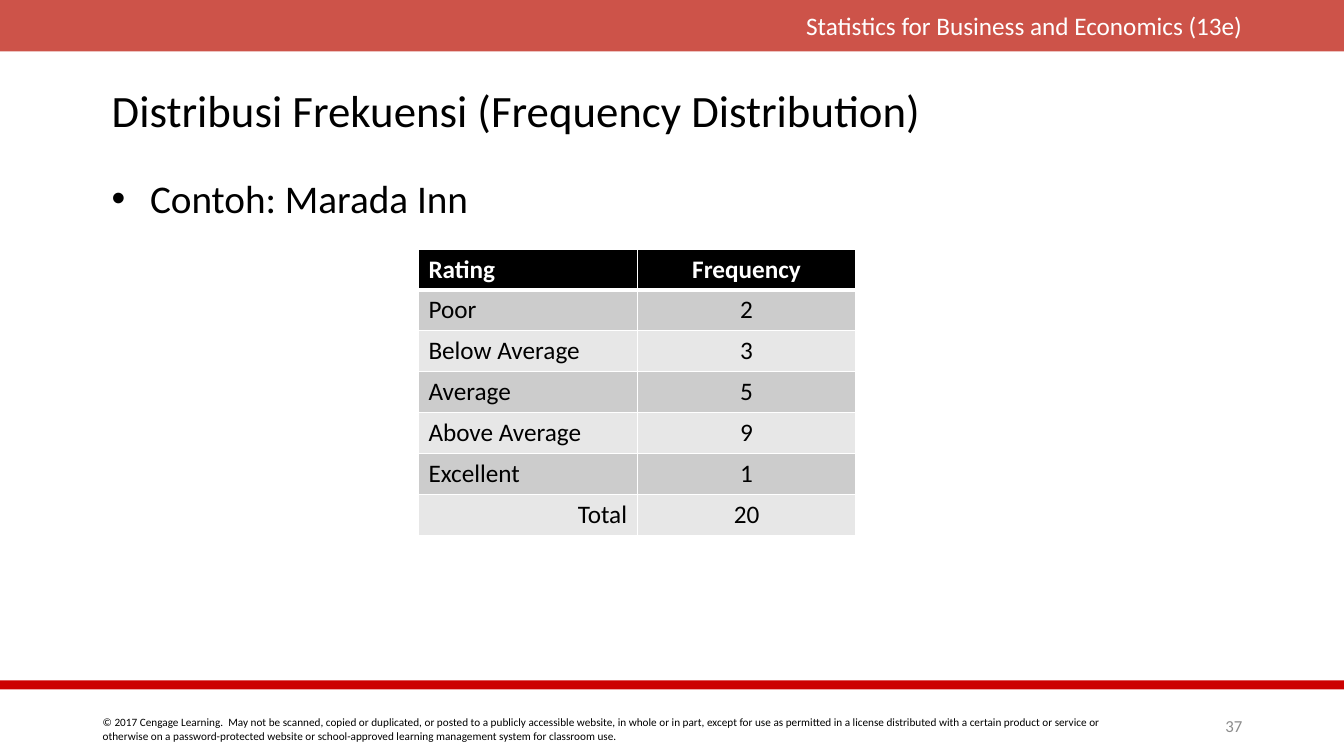
from dataclasses import dataclass

from lxml.etree import SubElement
from pptx import Presentation
from pptx.dml.color import RGBColor
from pptx.enum.shapes import MSO_SHAPE as Shape
from pptx.enum.text import MSO_ANCHOR as Anchor, PP_ALIGN as Align
from pptx.oxml.ns import qn
from pptx.util import Inches, Pt


@dataclass(frozen=True)
class Theme:
    """Colours, type sizes and font of the slide."""
    font: str = "Calibri"
    ink: str = "000000"
    paper: str = "FFFFFF"
    banner: str = "BF2317"
    banner_alpha: int = 78000
    rule: str = "CC0000"
    muted: str = "8C8C8C"
    bands: tuple = ("CCCCCC", "E7E7E7")
    title_size: int = 32
    body_size: int = 28
    table_size: int = 18
    banner_size: int = 18
    number_size: int = 12
    legal_size: int = 8
    grid_width: int = 1
    header_width: int = 3


THEME = Theme()
RATINGS = [
    ("Rating", "Frequency"),
    ("Poor", "2"),
    ("Below Average", "3"),
    ("Average", "5"),
    ("Above Average", "9"),
    ("Excellent", "1"),
    ("Total", "20"),
]
COPYRIGHT = (
    "© 2017 Cengage Learning.  May not be scanned, copied or duplicated, or posted to a "
    "publicly accessible website, in whole or in part, except for use as permitted in a "
    "license distributed with a certain product or service or otherwise on a "
    "password-protected website or school-approved learning management system for "
    "classroom use."
)


def write_run(paragraph, text, size, color=THEME.ink, align=Align.LEFT, bold=False):
    """Add one styled run to a paragraph."""
    paragraph.alignment = align
    run = paragraph.add_run()
    run.text = text
    run.font.name = THEME.font
    run.font.size = Pt(size)
    run.font.bold = bold
    run.font.color.rgb = RGBColor.from_string(color)


def add_text(slide, box, text, size, color=THEME.ink, align=Align.LEFT, anchor=Anchor.TOP):
    """Place a wrapped one-paragraph text box and return its paragraph."""
    frame = slide.shapes.add_textbox(*map(Inches, box)).text_frame
    frame.word_wrap = True
    frame.vertical_anchor = anchor
    paragraph = frame.paragraphs[0]
    write_run(paragraph, text, size, color, align)
    return paragraph


def add_bar(slide, box, color):
    """Place a plain filled bar and return it."""
    bar = slide.shapes.add_shape(Shape.RECTANGLE, *map(Inches, box))
    bar.shadow.inherit = False
    bar.fill.solid()
    bar.fill.fore_color.rgb = RGBColor.from_string(color)
    bar.line.fill.background()
    return bar


def add_banner(slide, box):
    """Draw the translucent top banner with the book title."""
    left, top, width, height = box
    banner = add_bar(slide, box, THEME.banner)
    tint = banner.fill._xPr.find(qn("a:solidFill"))[0]
    SubElement(tint, qn("a:alpha"), val=str(THEME.banner_alpha))
    add_text(slide, (left + width - 5.67, top + 0.05, 4.76, 0.4),
             "Statistics for Business and Economics (13e)",
             THEME.banner_size, THEME.paper, Align.RIGHT)


def add_footer(slide, box):
    """Draw the red rule, the copyright line and the slide number."""
    left, top, width, _ = box
    add_bar(slide, (left, top, width, 0.09), THEME.rule)
    add_text(slide, (left + 0.92, top + 0.3, 10.33, 0.37), COPYRIGHT, THEME.legal_size)
    add_text(slide, (left + width - 1.6, top + 0.3, 0.69, 0.3), "37",
             THEME.number_size, THEME.muted, Align.RIGHT, Anchor.MIDDLE)


def add_heading(slide, box):
    """Write the slide title and the bulleted example line."""
    left, top, width, _ = box
    title = add_text(slide, (left, top, width, 0.83),
                     "Distribusi Frekuensi (Frequency Distribution)",
                     THEME.title_size, anchor=Anchor.MIDDLE)
    example = add_text(slide, (left, top + 1.02, width, 0.6), "Contoh: Marada Inn",
                       THEME.body_size)
    title.line_spacing = example.line_spacing = 0.9
    properties = example._p.get_or_add_pPr()
    properties.set("marL", str(Inches(0.38)))
    properties.set("indent", str(Inches(-0.38)))
    SubElement(properties, qn("a:buFont"), typeface="Arial")
    SubElement(properties, qn("a:buChar"), char="•")


def set_borders(cell, top_width, bottom_width):
    """Give a cell white borders with the given top and bottom widths."""
    properties = cell._tc.get_or_add_tcPr()
    widths = {"lnL": THEME.grid_width, "lnR": THEME.grid_width,
              "lnT": top_width, "lnB": bottom_width}
    for side, width in widths.items():
        border = SubElement(properties, qn(f"a:{side}"), w=str(Pt(width)))
        fill = SubElement(border, qn("a:solidFill"))
        SubElement(fill, qn("a:srgbClr"), val=THEME.paper)


def add_rating_table(slide, box):
    """Build the frequency table with a black header and grey bands."""
    height = Inches(box[3])
    table = slide.shapes.add_table(len(RATINGS), 2, *map(Inches, box)).table
    table.horz_banding = False
    for index, entries in enumerate(RATINGS):
        header = index == 0
        table.rows[index].height = height // len(RATINGS)
        fill = THEME.ink if header else THEME.bands[(index - 1) % 2]
        label_align = Align.RIGHT if entries[0] == "Total" else Align.LEFT
        for cell, text, align in zip(table.rows[index].cells, entries,
                                     (label_align, Align.CENTER)):
            set_borders(cell,
                        THEME.header_width if index == 1 else THEME.grid_width,
                        THEME.header_width if header else THEME.grid_width)
            cell.fill.solid()
            cell.fill.fore_color.rgb = RGBColor.from_string(fill)
            write_run(cell.text_frame.paragraphs[0], text, THEME.table_size,
                      THEME.paper if header else THEME.ink, align, header)


def main():
    """Build and save the slide."""
    deck = Presentation()
    deck.slide_width, deck.slide_height = Inches(13.33), Inches(7.5)
    slide = deck.slides.add_slide(deck.slide_layouts[6])
    add_banner(slide, (0, 0, 13.33, 0.51))
    add_footer(slide, (0, 6.75, 13.33, 0.75))
    add_heading(slide, (1.01, 0.71, 11.31, 1.62))
    add_rating_table(slide, (4.15, 2.47, 4.34, 2.84))
    deck.save("out.pptx")


if __name__ == "__main__":
    main()
